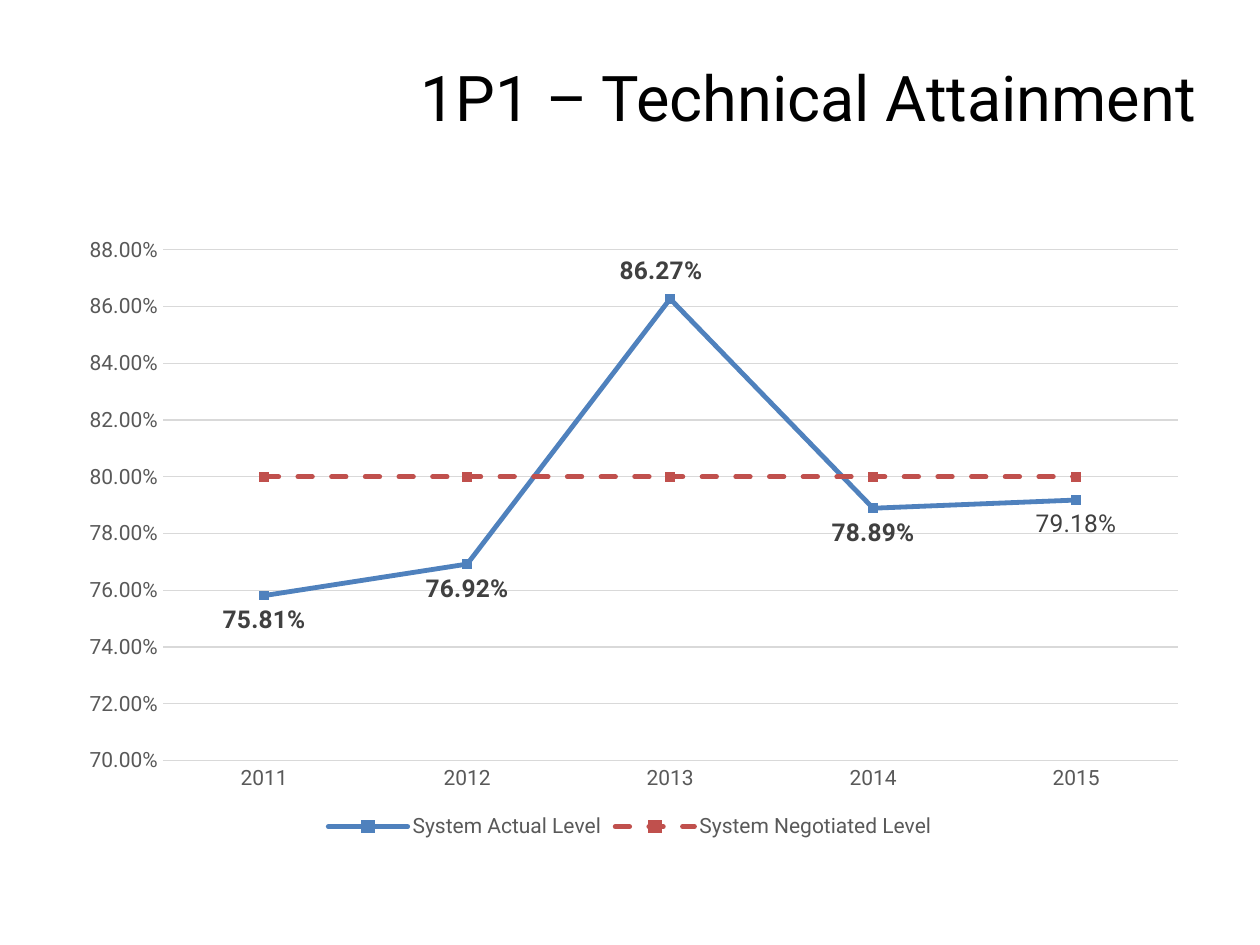
from lxml import etree
from pptx import Presentation
from pptx.chart.data import CategoryChartData
from pptx.dml.color import RGBColor
from pptx.enum import chart as ch, dml, text
from pptx.oxml.ns import qn
from pptx.util import Inches, Pt

FONT = "Roboto"
BLACK = RGBColor(0, 0, 0)
LABEL_GRAY = RGBColor(0x40, 0x40, 0x40)
AXIS_GRAY = RGBColor(0x59, 0x59, 0x59)
GRID_GRAY = RGBColor(0xD9, 0xD9, 0xD9)
BLUE = RGBColor(0x4F, 0x81, 0xBD)
RED = RGBColor(0xC0, 0x50, 0x4D)


def style_font(font, size, color, bold=False):
    font.name = FONT
    font.size = Pt(size)
    font.bold = bold
    font.color.rgb = color


def set_layout(parent, index, **settings):
    for old_layout in parent.findall(qn("c:layout")):
        parent.remove(old_layout)
    layout = etree.Element(qn("c:layout"))
    manual = etree.SubElement(layout, qn("c:manualLayout"))
    for tag, value in settings.items():
        etree.SubElement(manual, qn("c:" + tag)).set("val", str(value))
    parent.insert(index, layout)


prs = Presentation()
prs.slide_width, prs.slide_height = Inches(10), Inches(7.5)
slide = prs.slides.add_slide(prs.slide_layouts[5])

# Title
title = slide.shapes.title
title.left, title.top = Inches(3.08), Inches(0.25)
title.width, title.height = Inches(6.67), Inches(1.03)
title.text_frame.text = "1P1 – Technical Attainment"
title.text_frame.vertical_anchor = text.MSO_ANCHOR.MIDDLE
heading = title.text_frame.paragraphs[0]
heading.alignment = text.PP_ALIGN.CENTER
style_font(heading.runs[0].font, 36, BLACK)

# Attainment chart
levels = CategoryChartData(number_format="0.00%")
levels.categories = ["2011", "2012", "2013", "2014", "2015"]
levels.add_series("System Actual Level", [0.7581, 0.7692, 0.8627, 0.7889, 0.7918])
levels.add_series("System Negotiated Level", [0.8] * 5)
chart = slide.shapes.add_chart(
    ch.XL_CHART_TYPE.LINE_MARKERS, Inches(0.5), Inches(1.75), Inches(9), Inches(4.95), levels
).chart
style_font(chart.font, 10, BLACK)
chart.has_title = False
chart.has_legend = True
chart.legend.position = ch.XL_LEGEND_POSITION.BOTTOM
chart.legend.include_in_layout = False
style_font(chart.legend.font, 12, AXIS_GRAY)

# Axes
years, percent = chart.category_axis, chart.value_axis
for axis in (years, percent):
    axis.major_tick_mark = axis.minor_tick_mark = ch.XL_TICK_MARK.NONE
    style_font(axis.tick_labels.font, 12, AXIS_GRAY)
years.format.line.color.rgb = GRID_GRAY
years.format.line.width = Pt(1)
percent.minimum_scale, percent.maximum_scale, percent.major_unit = 0.70, 0.88, 0.02
percent.format.line.fill.background()
percent.tick_labels.number_format = "0.00%"
percent.tick_labels.number_format_is_linked = False
percent.major_gridlines.format.line.color.rgb = GRID_GRAY
percent.major_gridlines.format.line.width = Pt(0.75)

# Series lines and markers
plot = chart.plots[0]
plot.vary_by_categories = False
actual, negotiated = plot.series
for series, color in ((actual, BLUE), (negotiated, RED)):
    series.smooth = False
    series.format.line.color.rgb = color
    series.format.line.width = Pt(2.75)
    series.format.line._ln.set("cap", "rnd")
    series.marker.style = ch.XL_MARKER_STYLE.SQUARE
    series.marker.size = 5
    series.marker.format.fill.solid()
    series.marker.format.fill.fore_color.rgb = color
    series.marker.format.line.color.rgb = color
negotiated.format.line.dash_style = dml.MSO_LINE.DASH

# Labels of the actual level
labels = actual.data_labels
labels.show_value = True
labels.number_format = "0.00%"
labels.number_format_is_linked = False
labels.position = ch.XL_LABEL_POSITION.BELOW
style_font(labels.font, 14, LABEL_GRAY, bold=True)
peak = actual.points[2].data_label
style_font(peak.font, 14, LABEL_GRAY, bold=True)
peak.position = ch.XL_LABEL_POSITION.ABOVE
latest = actual.points[4].data_label
latest.text_frame.text = "79.18%"
style_font(latest.text_frame.paragraphs[0].runs[0].font, 14, LABEL_GRAY)
latest.position = ch.XL_LABEL_POSITION.BELOW

# Peak label nudged up and left; inner plot area as shares of the chart
peak_label = chart.element.find(".//" + qn("c:dLbl"))
set_layout(peak_label, 1, x=-0.8 / 100, y=-0.6 / 100)
plot_area = chart.element.find(".//" + qn("c:plotArea"))
set_layout(plot_area, 0, layoutTarget="inner", xMode="edge", yMode="edge",
           x=8.8 / 100, y=4.7 / 100, w=89.5 / 100, h=81.9 / 100)

prs.save("out.pptx")
